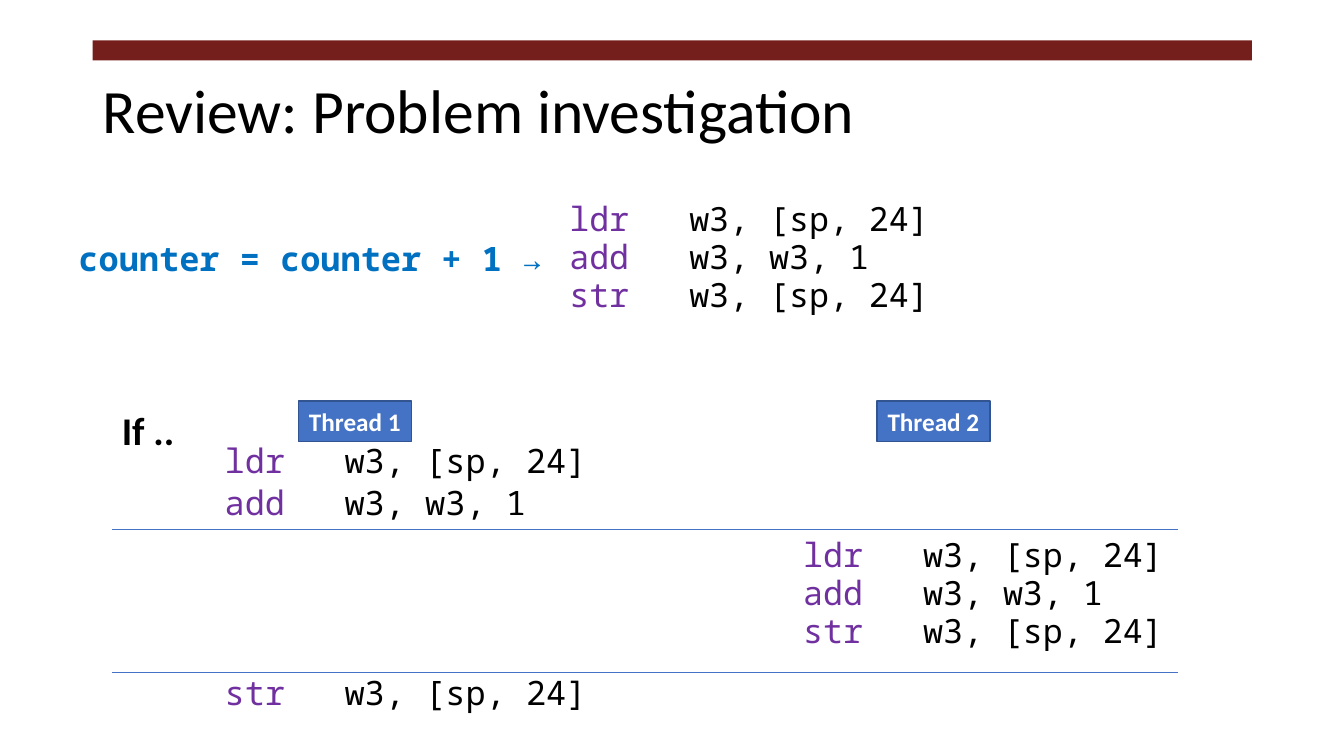
from dataclasses import dataclass

from lxml import etree
from pptx import Presentation
from pptx import util as u
from pptx.dml.color import RGBColor
from pptx.enum import shapes, text
from pptx.oxml import ns

COLORS = {
    "bar": "751F1C",
    "black": "000000",
    "white": "FFFFFF",
    "instruction": "7030A0",
    "statement": "0070C0",
    "thread": "4472C4",
    "thread_border": "325491",
}
SANS = "Calibri"
MONO = "Noto Sans Mono"
SLIDE_COLUMNS, SLIDE_ROWS = 133.33, 75
CELL = u.Inches(0.1)
OPERAND_TAB = 11.9

LOAD = ("ldr", "w3, [sp, 24]")
ADD = ("add", "w3, w3, 1")
STORE = ("str", "w3, [sp, 24]")
INCREMENT = (LOAD, ADD, STORE)


@dataclass(frozen=True)
class Area:
    column: float
    row: float
    columns: float
    rows: float

    def lengths(self) -> tuple:
        return tuple(cells(n) for n in (self.column, self.row, self.columns, self.rows))


@dataclass(frozen=True)
class CodeBlock:
    area: Area
    instructions: tuple
    size: float
    line_spacing: float


@dataclass(frozen=True)
class Label:
    area: Area
    wording: str
    size: float
    font: str
    color: str
    wrap: bool = False


@dataclass(frozen=True)
class ThreadTag:
    area: Area
    wording: str


CODE_BLOCKS = (
    CodeBlock(Area(55.5, 20.3, 39, 12.7), INCREMENT, 23.8, 0.7),
    CodeBlock(Area(21.3, 43.9, 39, 9.5), (LOAD, ADD), 24, 0.8),
    CodeBlock(Area(21.3, 66.9, 39, 5.2), (STORE,), 24, 0.8),
    CodeBlock(Area(78.7, 53.6, 39, 12.7), INCREMENT, 23.8, 0.7),
)
LABELS = (
    Label(Area(6.8, 23.1, 52.5, 5), "counter = counter + 1 →", 24, MONO, "statement", True),
    Label(Area(11.1, 39.8, 7.3, 5.7), "If ..", 28, SANS, "black"),
)
THREAD_TAGS = tuple(
    ThreadTag(Area(column, 39.8, 11.2, 4), f"Thread {number}")
    for number, column in enumerate((29.6, 87), start=1)
)
SWITCH_ROWS = (52.5, 66.7)


def cells(count: float) -> u.Length:
    return u.Emu(round(count * CELL))


def rgb(name: str) -> RGBColor:
    return RGBColor.from_string(COLORS[name])


def add_run(paragraph, wording: str, size: float, font: str, color: str, bold: bool = False) -> None:
    run = paragraph.add_run()
    run.text = wording
    run.font.size = u.Pt(size)
    run.font.name = font
    run.font.bold = bold
    run.font.color.rgb = rgb(color)


def add_title(slide, area: Area, wording: str) -> None:
    title = slide.shapes.title
    title.left, title.top, title.width, title.height = area.lengths()
    title.text_frame.vertical_anchor = text.MSO_ANCHOR.MIDDLE
    paragraph = title.text_frame.paragraphs[0]
    paragraph.alignment = text.PP_ALIGN.LEFT
    paragraph.line_spacing = 0.9
    add_run(paragraph, wording, 44, SANS, "black")


def add_rectangle(slide, area: Area, fill: str):
    shape = slide.shapes.add_shape(shapes.MSO_SHAPE.RECTANGLE, *area.lengths())
    shape.shadow.inherit = False
    shape.fill.solid()
    shape.fill.fore_color.rgb = rgb(fill)
    shape.line.fill.background()
    return shape


def add_thread_tag(slide, tag: ThreadTag) -> None:
    shape = add_rectangle(slide, tag.area, "thread")
    shape.line.color.rgb = rgb("thread_border")
    shape.line.width = u.Pt(1)
    shape.text_frame.word_wrap = False
    paragraph = shape.text_frame.paragraphs[0]
    paragraph.alignment = text.PP_ALIGN.CENTER
    add_run(paragraph, tag.wording, 18, SANS, "white", bold=True)


def add_label(slide, label: Label) -> None:
    frame = slide.shapes.add_textbox(*label.area.lengths()).text_frame
    frame.word_wrap = label.wrap
    add_run(frame.paragraphs[0], label.wording, label.size, label.font, label.color, bold=True)


def add_operand_tab(paragraph) -> None:
    properties = paragraph._p.get_or_add_pPr()
    stops = etree.SubElement(properties, ns.qn("a:tabLst"))
    etree.SubElement(stops, ns.qn("a:tab"), pos=str(cells(OPERAND_TAB)), algn="l")


def add_code_block(slide, block: CodeBlock) -> None:
    frame = slide.shapes.add_textbox(*block.area.lengths()).text_frame
    frame.word_wrap = True
    for index, (operation, operands) in enumerate(block.instructions):
        paragraph = frame.add_paragraph() if index else frame.paragraphs[0]
        add_operand_tab(paragraph)
        paragraph.line_spacing = block.line_spacing
        paragraph.space_before = u.Pt(7 if index else 0)
        add_run(paragraph, operation, block.size, MONO, "instruction")
        add_run(paragraph, f"\t{operands}", block.size, MONO, "black")


def add_switch_line(slide, row: float) -> None:
    line = slide.shapes.add_connector(
        shapes.MSO_CONNECTOR.STRAIGHT, cells(11.1), cells(row), cells(116.9), cells(row)
    )
    line.line.color.rgb = rgb("thread")
    line.line.width = u.Pt(0.5)
    etree.SubElement(line._element.spPr, ns.qn("a:effectLst"))


def main() -> None:
    presentation = Presentation()
    presentation.slide_width = cells(SLIDE_COLUMNS)
    presentation.slide_height = cells(SLIDE_ROWS)
    slide = presentation.slides.add_slide(presentation.slide_layouts[5])

    add_rectangle(slide, Area(9.2, 4, 115, 2), "bar")
    add_title(slide, Area(9.2, 4, 115, 14.5), "Review: Problem investigation")
    for label in LABELS:
        add_label(slide, label)
    for tag in THREAD_TAGS:
        add_thread_tag(slide, tag)
    for row in SWITCH_ROWS:
        add_switch_line(slide, row)
    for block in CODE_BLOCKS:
        add_code_block(slide, block)

    presentation.save("out.pptx")


if __name__ == "__main__":
    main()
